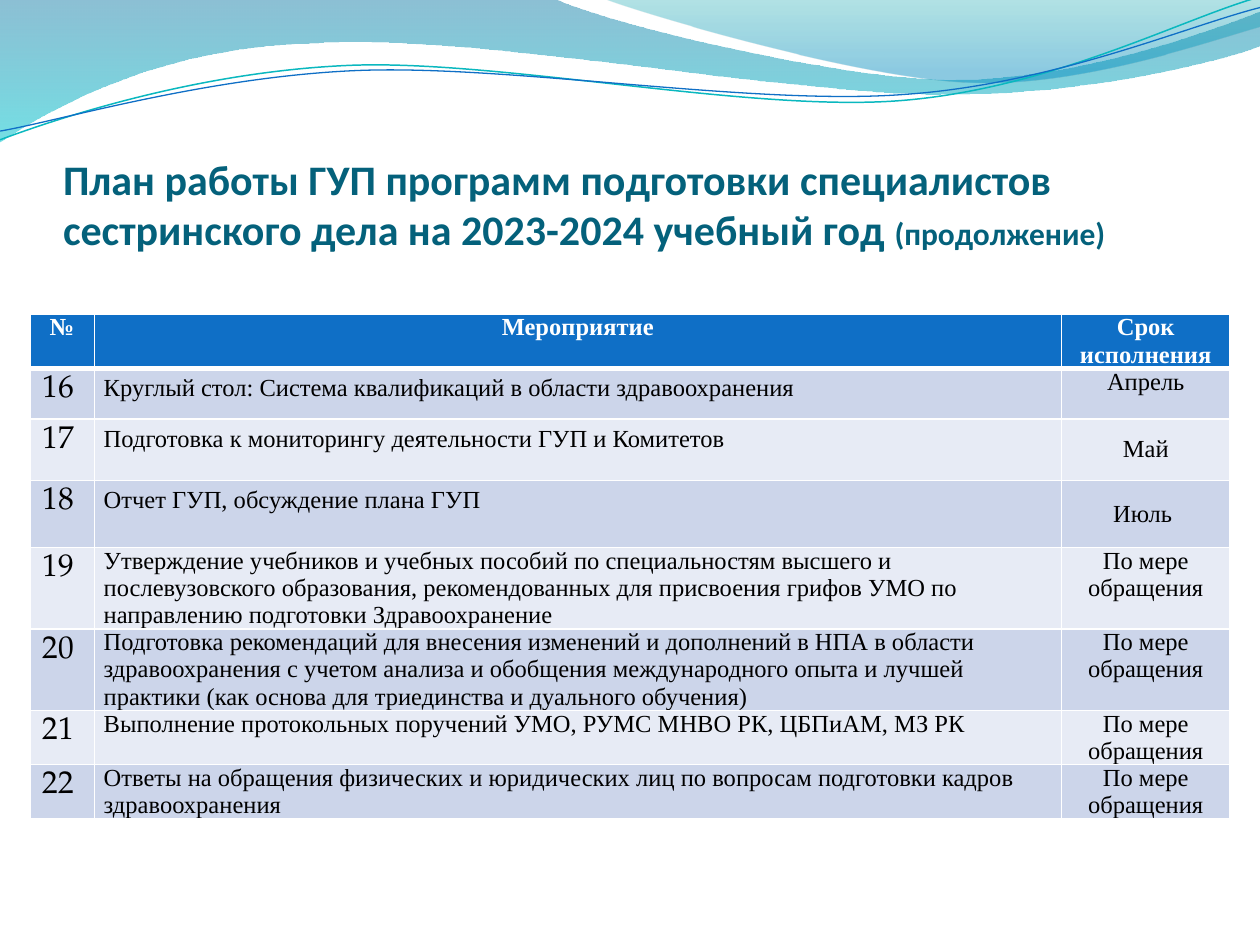
"""Build the work plan slide with wave decoration and a table of activities."""
from lxml import etree
from pptx import Presentation
from pptx.dml.color import RGBColor
from pptx.enum.text import MSO_ANCHOR, PP_ALIGN
from pptx.oxml.ns import qn
from pptx.util import Pt

LEFT, CENTER, JUSTIFY = PP_ALIGN.LEFT, PP_ALIGN.CENTER, PP_ALIGN.JUSTIFY
TOP, MIDDLE, BOTTOM = MSO_ANCHOR.TOP, MSO_ANCHOR.MIDDLE, MSO_ANCHOR.BOTTOM
COLORS = {
    "white": "FFFFFF", "black": "000000", "title": "04617B", "blue": "0F6FC6",
    "band_dark": "CCD5EA", "band_light": "E7EBF5", "teal_line": "0AB8BF",
    "deep": "0074A1", "cyan": "00C6CF", "teal": "00A1A9", "azure": "008BBF",
}
SERIF, NUMERAL = "Times New Roman", "TeX Gyre Pagella"


def add_text(paragraph, text, font=SERIF, size=14, color="black", bold=False,
             align=LEFT, spacing=1.0):
    paragraph.alignment = align
    paragraph.line_spacing = spacing
    run = paragraph.add_run()
    run.text = text
    run.font.name = font
    run.font.size = Pt(size)
    run.font.bold = bold
    run.font.color.rgb = RGBColor.from_string(COLORS[color])


def add_curve(shapes, segments, closed):
    outline = [(Pt(x), Pt(y)) for segment in segments for x, y in segment]
    builder = shapes.build_freeform(*outline[0], scale=1.0)
    builder.add_line_segments(outline[1:], close=closed)
    shape = builder.convert_to_shape()
    lines = iter(list(shape._element.iter(qn("a:lnTo"))))
    for segment in segments[1:]:
        pieces = [next(lines) for _ in segment]
        if len(pieces) == 3:
            bezier = etree.Element(qn("a:cubicBezTo"))
            pieces[0].addprevious(bezier)
            for piece in pieces:
                bezier.append(piece[0])
                piece.getparent().remove(piece)
    return shape


presentation = Presentation()
presentation.slide_width, presentation.slide_height = Pt(720), Pt(540)
slide = presentation.slides.add_slide(presentation.slide_layouts[5])

wide_wave = [
    [(0, 0)], [(316.8, -0.7)],
    [(342.7, 12.2), (478, 45.4), (545.8, 45.4)],
    [(614.2, 45.4), (689.8, 18.7), (720, 6.5)],
    [(720.7, 25.9)],
    [(707.8, 31.7), (626.4, 54.7), (537.1, 54)],
    [(447.8, 54), (275, 20.2), (185, 24.5)],
    [(92.9, 25.9), (33.1, 59.8), (-0.7, 81.4)],
]
right_wave = [
    [(344.9, -0.7)],
    [(366.5, 7.9), (491, 44.6), (553.7, 46.8)],
    [(616.3, 49.7), (691.9, 23), (720, 15.1)],
    [(720, 0)],
]
teal_curve = [
    [(0, 79.9)],
    [(34.6, 67), (113.8, 41), (199.4, 37.4)],
    [(284.4, 33.8), (427, 64.1), (513.4, 57.6)],
    [(599.8, 51.1), (675.4, 10.8), (718.6, -1.4)],
]
blue_curve = [
    [(0, 74.9)],
    [(33.8, 69.1), (118.1, 43.9), (203.8, 40.3)],
    [(290.2, 36.7), (429.8, 60.5), (516.2, 54)],
    [(601.9, 48.2), (677.5, 15.1), (720, 4.3)],
]
waves = [
    (wide_wave, [(0, "deep", 45), (1, "cyan", 55)], None, 0),
    (right_wave, [(0, "teal", 30), (0.8, "azure", 45)], None, 0),
    (teal_curve, None, "teal_line", 0.85),
    (blue_curve, None, "blue", 0.75),
]
for segments, stops, line_color, line_width in waves:
    shape = add_curve(slide.shapes, segments, closed=stops is not None)
    shape.shadow.inherit = False
    if stops:
        shape.line.fill.background()
        shape.fill.gradient()
        shape.fill.gradient_angle = 270
        for stop, (position, color, _) in zip(shape.fill.gradient_stops, stops):
            stop.position = position
            stop.color.rgb = RGBColor.from_string(COLORS[color])
        for element, (_, _, opacity) in zip(shape._element.iter(qn("a:srgbClr")), stops):
            etree.SubElement(element, qn("a:alpha"), val=str(opacity * 1000))
    else:
        shape.fill.background()
        shape.line.color.rgb = RGBColor.from_string(COLORS[line_color])
        shape.line.width = Pt(line_width)

title = slide.shapes.title
title.left, title.top, title.width, title.height = Pt(36), Pt(77.5), Pt(648), Pt(67.7)
frame = title.text_frame
frame.vertical_anchor = BOTTOM
frame.word_wrap = True
frame.margin_left = frame.margin_right = frame.margin_bottom = 0
frame.margin_top = Pt(3.6)
title_parts = [
    ("План работы ГУП программ подготовки специалистов сестринского дела "
     "на 2023-2024 учебный год ", 24),
    ("(продолжение)", 18),
]
for text, size in title_parts:
    add_text(frame.paragraphs[0], text, font="Calibri", size=size, color="title", bold=True)
slide.shapes._spTree.append(title._element)

ON_REQUEST = "По мере обращения"
loose = {"spacing": 1.25}
activities = [
    ("Круглый стол: Система квалификаций в области здравоохранения",
     "Апрель", 29, {"spacing": 1.25, "align": JUSTIFY}, TOP),
    ("Подготовка к мониторингу деятельности ГУП и Комитетов", "Май", 35, loose, MIDDLE),
    ("Отчет ГУП, обсуждение плана ГУП", "Июль ", 38.5, loose, MIDDLE),
    ("Утверждение учебников и учебных пособий по специальностям высшего и "
     "послевузовского образования, рекомендованных для присвоения грифов УМО по "
     "направлению подготовки Здравоохранение", ON_REQUEST, 46.5, {}, TOP),
    ("Подготовка рекомендаций для внесения изменений и дополнений в НПА в области "
     "здравоохранения с учетом анализа и обобщения международного опыта и лучшей "
     "практики (как основа для триединства и дуального обучения)",
     ON_REQUEST, 46.5, {}, TOP),
    ("Выполнение протокольных поручений УМО, РУМС МНВО РК, ЦБПиАМ, МЗ РК",
     ON_REQUEST, 31, {}, TOP),
    ("Ответы на обращения физических и юридических лиц по вопросам подготовки кадров "
     "здравоохранения", ON_REQUEST, 31, {}, TOP),
]
heading = {"color": "white", "bold": True, "align": CENTER}
rows = [(29.5, TOP, [(text, heading) for text in ("№", "Мероприятие", "Срок исполнения")])]
for number, (activity, term, height, style, anchor) in enumerate(activities, 16):
    rows.append((height, anchor, [(str(number), {"font": NUMERAL, "size": 18}),
                                  (activity, style), (term, {"align": CENTER})]))

table_height = sum(row[0] for row in rows)
table = slide.shapes.add_table(len(rows), 3, Pt(17), Pt(179.5), Pt(686),
                               Pt(table_height)).table
table.first_row = table.horz_banding = False
for column, width in zip(table.columns, (36.9, 552.6, 96.5)):
    column.width = Pt(width)
for row_index, (height, anchor, entries) in enumerate(rows):
    table.rows[row_index].height = Pt(height)
    band = "band_dark" if row_index % 2 else "band_light"
    for column_index, (text, style) in enumerate(entries):
        cell = table.cell(row_index, column_index)
        is_number = row_index > 0 and column_index == 0
        cell.margin_left = cell.margin_right = Pt(7.2 if is_number else 5.4)
        cell.margin_top = cell.margin_bottom = Pt(3.6 if is_number else 0)
        cell.vertical_anchor = anchor if column_index == 2 else TOP
        add_text(cell.text_frame.paragraphs[0], text, **style)
        properties = cell._tc.get_or_add_tcPr()
        for side in ("lnL", "lnR", "lnT", "lnB"):
            thick = (row_index, side) in ((0, "lnB"), (1, "lnT"))
            border = etree.SubElement(properties, qn(f"a:{side}"), w=str(Pt(3 if thick else 1)))
            border_fill = etree.SubElement(border, qn("a:solidFill"))
            etree.SubElement(border_fill, qn("a:srgbClr"), val=COLORS["white"])
        cell.fill.solid()
        cell.fill.fore_color.rgb = RGBColor.from_string(
            COLORS[band if row_index else "blue"])

presentation.save("out.pptx")
